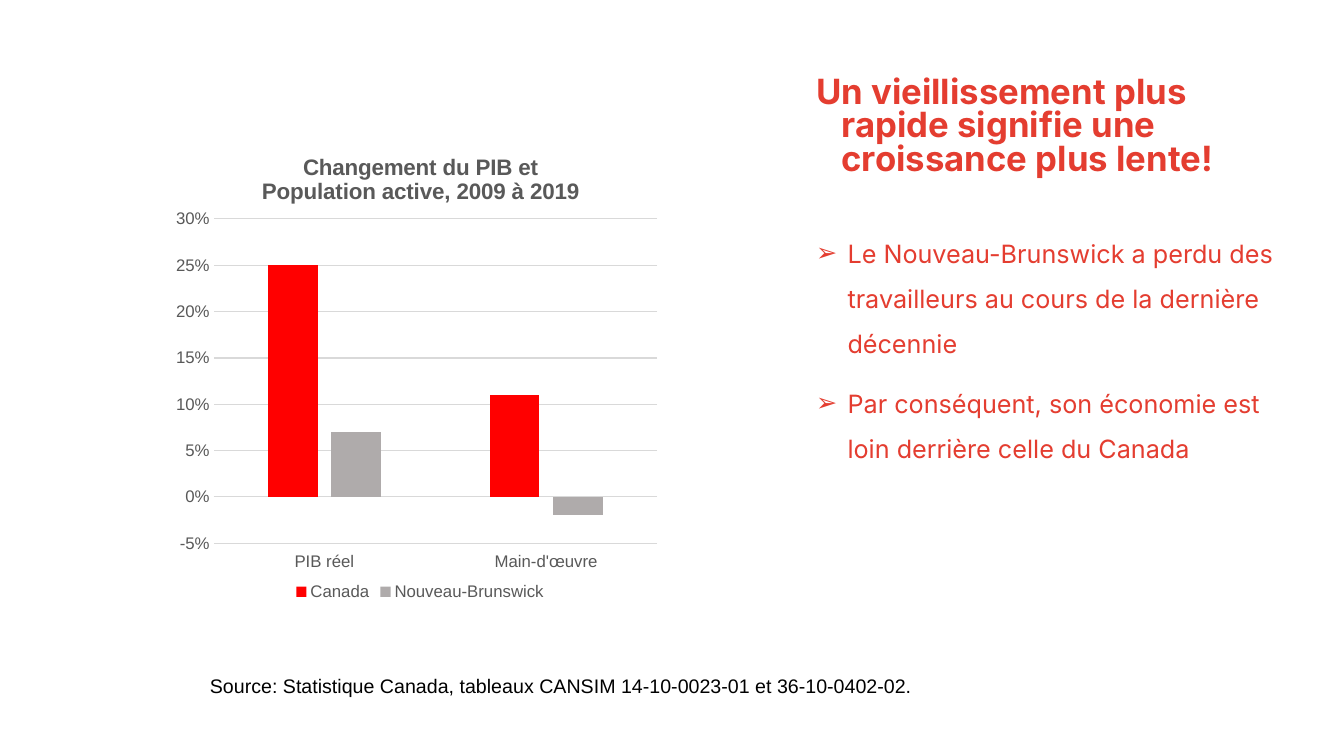
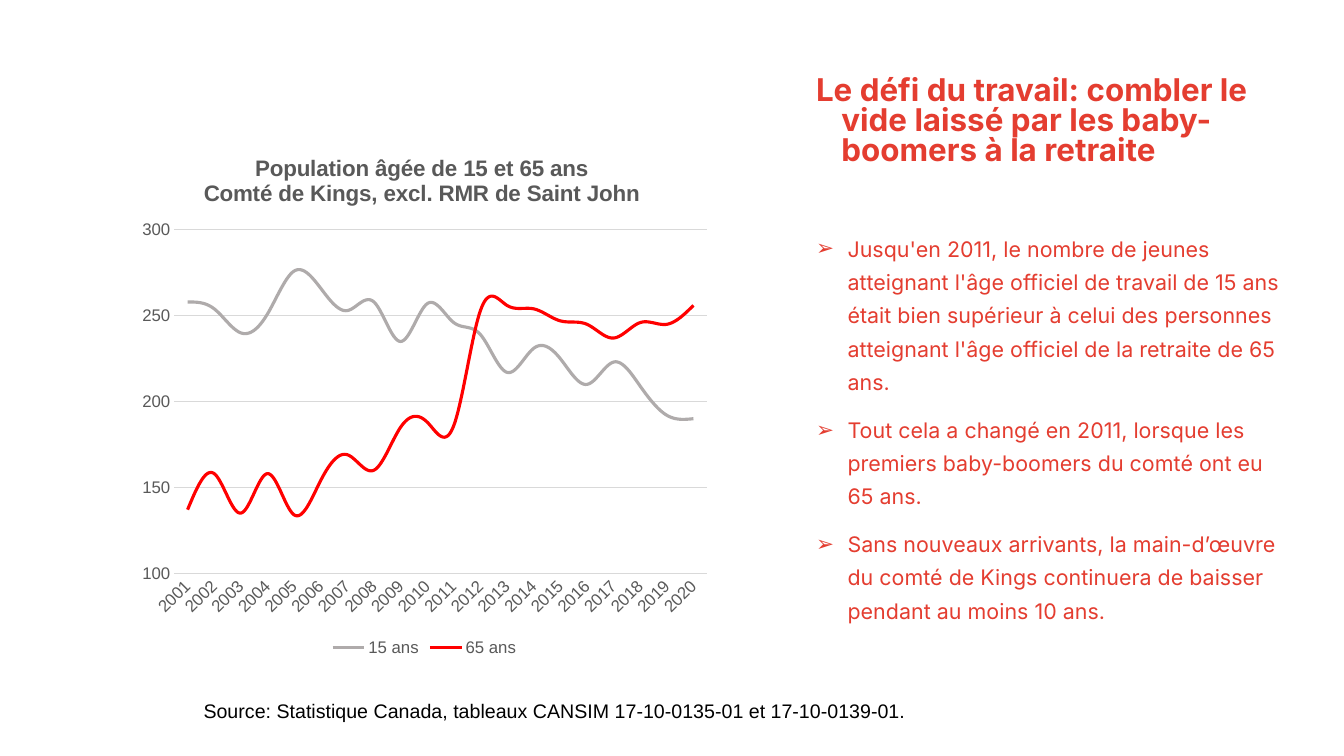
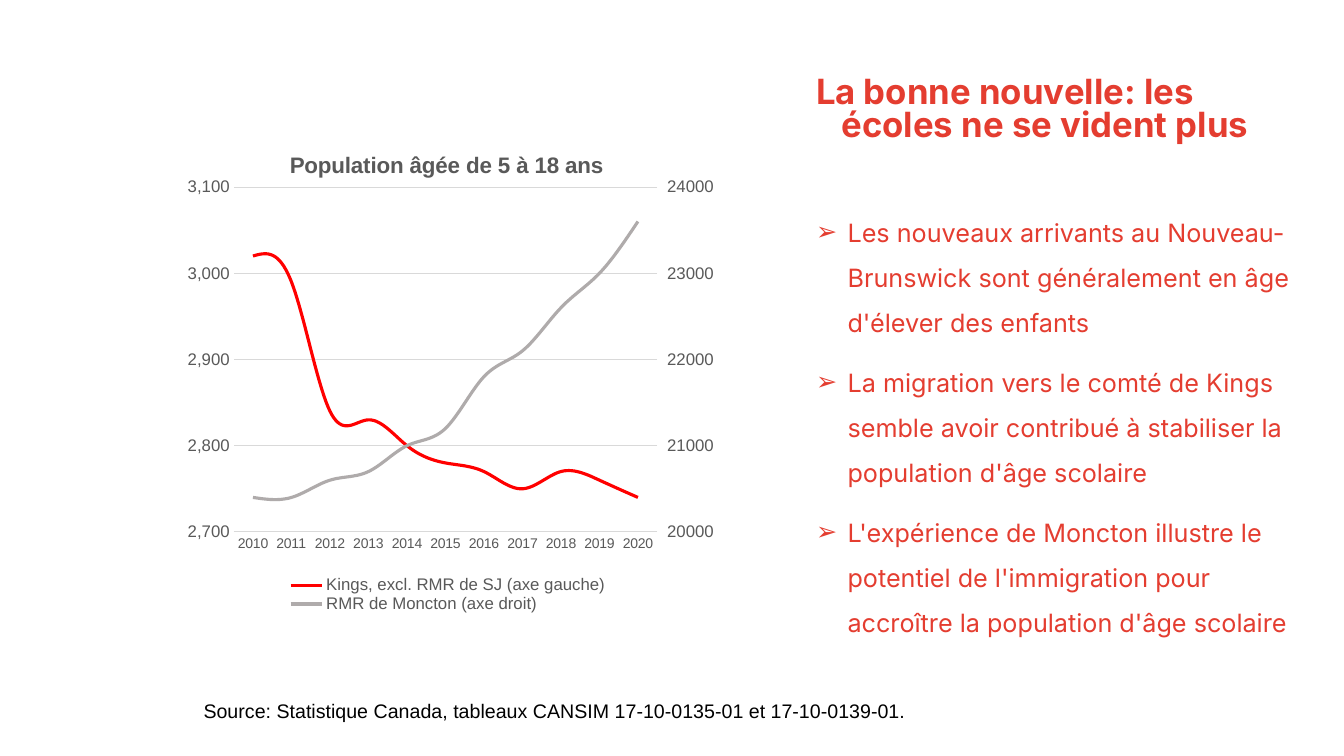
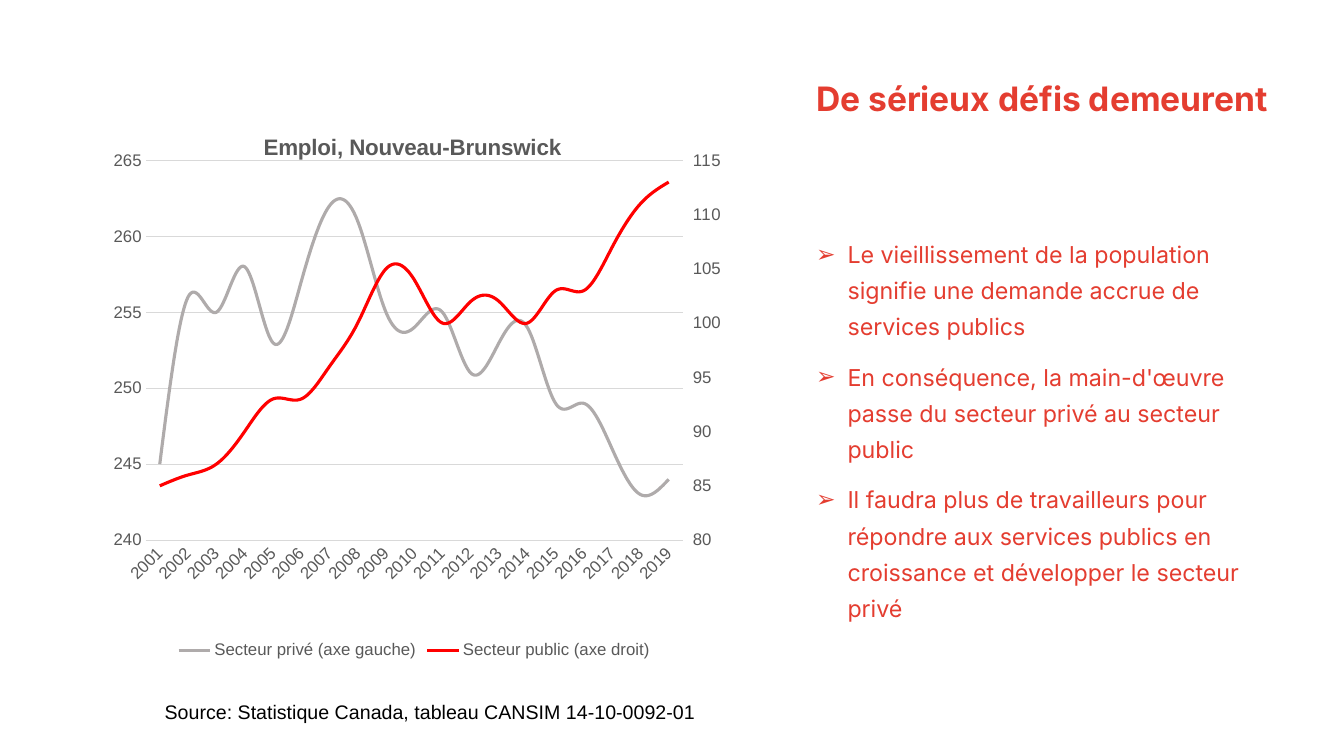
"""Build four slides on ageing and employment in New Brunswick."""
from copy import deepcopy
from dataclasses import dataclass

from lxml import etree
from pptx import Presentation
from pptx import util as u
from pptx.chart import axis as chart_axis
from pptx.chart import data
from pptx.dml import color
from pptx.enum import chart as chart_enum
from pptx.enum import text
from pptx.oxml import ns

COLORS = {
    "accent": "E43D30",
    "source": "000000",
    "label": "595959",
    "grid": "D9D9D9",
    "red": "FF0000",
    "grey": "AFABAB",
}
HEADING_FONT = "Inter"
CHART_FONT = "Arial"
PANEL_LEFT = 19.68
PANEL_WIDTH = 12.93
TITLE_TOP = 1.83
CHART_TITLE_Y = 0.03


@dataclass(frozen=True)
class Box:
    left: float
    top: float
    width: float
    height: float

    def lengths(self) -> tuple:
        return u.Cm(self.left), u.Cm(self.top), u.Cm(self.width), u.Cm(self.height)


@dataclass(frozen=True)
class Series:
    name: str
    values: tuple
    color: str


@dataclass(frozen=True)
class Scale:
    low: float
    high: float
    step: float
    number_format: str = "0"


@dataclass(frozen=True)
class ChartSpec:
    box: Box
    title: tuple
    title_x: float
    plot: tuple
    categories: tuple
    series: tuple
    left: Scale
    right: Scale | None = None
    legend: tuple | None = None
    columns: bool = False
    category_size: float = 12
    slanted: bool = False


@dataclass(frozen=True)
class Page:
    title: str
    title_size: float
    title_spacing: float
    bullets: tuple
    bullet_box: Box
    bullet_size: float
    bullet_spacing: float
    source: str
    source_box: Box
    chart: ChartSpec


def years(first: int, last: int) -> tuple:
    return tuple(str(year) for year in range(first, last + 1))


PAGES = (
    Page(
        "Un vieillissement plus rapide signifie une croissance plus lente!", 24.8, 0.8,
        (
            "Le Nouveau-Brunswick a perdu des travailleurs au cours de la dernière décennie",
            "Par conséquent, son économie est loin derrière celle du Canada",
        ),
        Box(PANEL_LEFT, 5.49, PANEL_WIDTH, 11), 18, 1.5,
        "Source: Statistique Canada, tableaux CANSIM 14-10-0023-01 et 36-10-0402-02.",
        Box(5.04, 16.85, 23.77, 0.86),
        ChartSpec(
            Box(4.24, 3.43, 12.7, 11.81),
            ("Changement du PIB et", "Population active, 2009 à 2019"), 0.18,
            (0.09, 0.177, 0.88, 0.692),
            ("PIB réel", "Main-d'œuvre"),
            (
                Series("Canada", (0.25, 0.11), "red"),
                Series("Nouveau-Brunswick", (0.07, -0.02), "grey"),
            ),
            Scale(-0.05, 0.3, 0.05, "0%"),
            columns=True,
        ),
    ),
    Page(
        "Le défi du travail: combler le vide laissé par les baby-boomers à la retraite", 22.4, 0.8,
        (
            "Jusqu'en 2011, le nombre de jeunes atteignant l'âge officiel de travail de 15 ans "
            "était bien supérieur à celui des personnes atteignant l'âge officiel de la retraite "
            "de 65 ans.",
            "Tout cela a changé en 2011, lorsque les premiers baby-boomers du comté ont eu 65 ans.",
            "Sans nouveaux arrivants, la main-d’œuvre du comté de Kings continuera de baisser "
            "pendant au moins 10 ans.",
        ),
        Box(PANEL_LEFT, 5.62, PANEL_WIDTH, 11), 15.3, 1.3,
        "Source: Statistique Canada, tableaux CANSIM 17-10-0135-01 et 17-10-0139-01.",
        Box(4.88, 17.48, 23.77, 0.86),
        ChartSpec(
            Box(3.28, 3.43, 14.83, 13.21),
            ("Population âgée de 15 et 65 ans", "Comté de Kings, excl. RMR de Saint John"), 0.12,
            (0.075, 0.179, 0.905, 0.655),
            years(2001, 2020),
            (
                Series("15 ans", (258, 254, 240, 251, 276, 266, 253, 258, 235, 257,
                                  246, 239, 217, 231, 225, 210, 223, 209, 192, 190), "grey"),
                Series("65 ans", (137, 158, 135, 158, 134, 154, 169, 160, 185, 188,
                                  186, 253, 256, 254, 247, 245, 237, 246, 245, 256), "red"),
            ),
            Scale(100, 300, 50, "#,##0"),
            slanted=True,
        ),
    ),
    Page(
        "La bonne nouvelle: les écoles ne se vident plus", 24.8, 0.8,
        (
            "Les nouveaux arrivants au Nouveau-Brunswick sont généralement en âge d'élever "
            "des enfants",
            "La migration vers le comté de Kings semble avoir contribué à stabiliser la "
            "population d'âge scolaire",
            "L'expérience de Moncton illustre le potentiel de l'immigration pour accroître la "
            "population d'âge scolaire",
        ),
        Box(PANEL_LEFT, 4.96, 13.39, 12.14), 18, 1.5,
        "Source: Statistique Canada, tableaux CANSIM 17-10-0135-01 et 17-10-0139-01.",
        Box(4.88, 17.48, 23.77, 0.86),
        ChartSpec(
            Box(4.24, 3.33, 14.1, 12.14),
            ("Population âgée de 5 à 18 ans",), 0.21,
            (0.117, 0.114, 0.757, 0.716),
            years(2010, 2020),
            (
                Series("Kings, excl. RMR de SJ (axe gauche)",
                       (3020, 2990, 2840, 2830, 2800, 2780, 2770, 2750, 2770, 2760, 2740), "red"),
                Series("RMR de Moncton (axe droit)",
                       (20400, 20400, 20600, 20700, 21000, 21200,
                        21800, 22100, 22600, 23000, 23600), "grey"),
            ),
            Scale(2700, 3100, 100, "#,##0"),
            Scale(20000, 24000, 1000),
            legend=(0.21, 0.92, 0.58, 0.08),
            category_size=10,
        ),
    ),
    Page(
        "De sérieux défis demeurent", 24, 1,
        (
            "Le vieillissement de la population signifie une demande accrue de services publics",
            "En conséquence, la main-d'œuvre passe du secteur privé au secteur public",
            "Il faudra plus de travailleurs pour répondre aux services publics en croissance et "
            "développer le secteur privé",
        ),
        Box(PANEL_LEFT, 5.72, PANEL_WIDTH, 11), 16.6, 1.3,
        "Source: Statistique Canada, tableau CANSIM 14-10-0092-01",
        Box(3.9, 17.51, 22.78, 0.86),
        ChartSpec(
            Box(2.64, 2.82, 15.6, 13.89),
            ("Emploi, Nouveau-Brunswick",), 0.25,
            (0.066, 0.088, 0.868, 0.689),
            years(2001, 2019),
            (
                Series("Secteur privé (axe gauche)",
                       (245, 256, 255, 258, 253, 257, 262, 261, 255, 254,
                        255, 251, 253, 254, 249, 249, 246, 243, 244), "grey"),
                Series("Secteur public (axe droit)",
                       (85, 86, 87, 90, 93, 93, 96, 100, 105, 104,
                        100, 102, 102, 100, 103, 103, 107, 111, 113), "red"),
            ),
            Scale(240, 265, 5),
            Scale(80, 115, 5),
            slanted=True,
        ),
    ),
)


def rgb(name: str) -> color.RGBColor:
    return color.RGBColor.from_string(COLORS[name])


def style_font(font, name: str, size: float, color_name: str, bold: bool = False) -> None:
    font.name = name
    font.size = u.Pt(size)
    font.bold = bold
    font.color.rgb = rgb(color_name)


def add_run(paragraph, content: str, name: str, size: float, color_name: str,
            bold: bool = False) -> None:
    run = paragraph.add_run()
    run.text = content
    style_font(run.font, name, size, color_name, bold)


def set_indent(paragraph, margin: float, indent: float) -> None:
    properties = paragraph._p.get_or_add_pPr()
    properties.set("marL", str(u.Cm(margin)))
    properties.set("indent", str(u.Cm(indent)))


def add_bullet(paragraph) -> None:
    properties = paragraph._p.get_or_add_pPr()
    bullet_color = etree.SubElement(properties, ns.qn("a:buClr"))
    etree.SubElement(bullet_color, ns.qn("a:srgbClr"), val=COLORS["accent"])
    etree.SubElement(properties, ns.qn("a:buFont"), typeface=CHART_FONT)
    etree.SubElement(properties, ns.qn("a:buChar"), char="➢")


def add_title(slide, page: Page) -> None:
    title = slide.shapes.title
    box = Box(PANEL_LEFT, TITLE_TOP, PANEL_WIDTH, 3.3)
    title.left, title.top, title.width, title.height = box.lengths()
    frame = title.text_frame
    frame.word_wrap = True
    frame.auto_size = text.MSO_AUTO_SIZE.NONE
    frame.vertical_anchor = text.MSO_ANCHOR.TOP
    paragraph = frame.paragraphs[0]
    paragraph.alignment = text.PP_ALIGN.LEFT
    paragraph.line_spacing = page.title_spacing
    set_indent(paragraph, 1.27, -0.64)
    add_run(paragraph, page.title, HEADING_FONT, page.title_size, "accent", True)


def add_text_frame(slide, box: Box):
    frame = slide.shapes.add_textbox(*box.lengths()).text_frame
    frame.word_wrap = True
    return frame


def add_bullets(slide, page: Page) -> None:
    frame = add_text_frame(slide, page.bullet_box)
    for index, content in enumerate(page.bullets):
        paragraph = frame.add_paragraph() if index else frame.paragraphs[0]
        add_bullet(paragraph)
        set_indent(paragraph, 1.43, -0.79)
        paragraph.line_spacing = page.bullet_spacing
        if index:
            paragraph.space_before = u.Pt(10)
        add_run(paragraph, content, HEADING_FONT, page.bullet_size, "accent")


def add_source(slide, page: Page) -> None:
    frame = add_text_frame(slide, page.source_box)
    add_run(frame.paragraphs[0], page.source, CHART_FONT, 14, "source")


def set_layout(parent, position: int, values: tuple, inner: bool = False) -> None:
    for old in parent.findall(ns.qn("c:layout")):
        parent.remove(old)
    layout = etree.Element(ns.qn("c:layout"))
    manual = etree.SubElement(layout, ns.qn("c:manualLayout"))
    if inner:
        etree.SubElement(manual, ns.qn("c:layoutTarget"), val="inner")
    for mode in ("xMode", "yMode"):
        etree.SubElement(manual, ns.qn(f"c:{mode}"), val="edge")
    for key, value in zip(("x", "y", "w", "h"), values):
        etree.SubElement(manual, ns.qn(f"c:{key}"), val=str(value))
    parent.insert(position, layout)


def set_scale(value_axis, scale: Scale) -> None:
    value_axis.minimum_scale = scale.low
    value_axis.maximum_scale = scale.high
    value_axis.major_unit = scale.step
    value_axis.tick_labels.number_format = scale.number_format
    value_axis.tick_labels.number_format_is_linked = False


def format_axes(chart, spec: ChartSpec) -> None:
    category_axis, value_axis = chart.category_axis, chart.value_axis
    for axis, size in ((category_axis, spec.category_size), (value_axis, 12)):
        axis.major_tick_mark = chart_enum.XL_TICK_MARK.NONE
        style_font(axis.tick_labels.font, CHART_FONT, size, "label")
    if spec.columns:
        category_axis.tick_label_position = chart_enum.XL_TICK_LABEL_POSITION.LOW
    value_axis.has_major_gridlines = True
    for line in (category_axis.format.line, value_axis.major_gridlines.format.line):
        line.color.rgb = rgb("grid")
        line.width = u.Pt(0.75)
    value_axis.format.line.fill.background()
    if spec.slanted:
        body = category_axis._element.find(f"{ns.qn('c:txPr')}/{ns.qn('a:bodyPr')}")
        body.set("rot", "-2700000")
    set_scale(value_axis, spec.left)


def add_right_axis(chart, scale: Scale) -> None:
    plot_area = chart._chartSpace.chart.plotArea
    first = plot_area.find(ns.qn("c:lineChart"))
    second = deepcopy(first)
    first.remove(first.findall(ns.qn("c:ser"))[1])
    second.remove(second.find(ns.qn("c:ser")))
    first.addnext(second)

    category_element = deepcopy(chart.category_axis._element)
    value_element = deepcopy(chart.value_axis._element)
    identifiers = ("50010", "50020")
    for reference, identifier in zip(second.findall(ns.qn("c:axId")), identifiers):
        reference.set("val", identifier)
    pairs = zip((category_element, value_element), identifiers, reversed(identifiers))
    for element, own, crossing in pairs:
        element.find(ns.qn("c:axId")).set("val", own)
        element.find(ns.qn("c:crossAx")).set("val", crossing)
    category_element.find(ns.qn("c:delete")).set("val", "1")
    value_element.find(ns.qn("c:axPos")).set("val", "r")
    value_element.find(ns.qn("c:crosses")).set("val", "max")
    chart.value_axis._element.addnext(value_element)
    value_element.addnext(category_element)

    right_axis = chart_axis.ValueAxis(value_element)
    right_axis.has_major_gridlines = False
    right_axis.major_tick_mark = chart_enum.XL_TICK_MARK.OUTSIDE
    set_scale(right_axis, scale)


def format_series(chart, spec: ChartSpec) -> None:
    plot = chart.plots[0]
    plot.vary_by_categories = False
    if spec.columns:
        plot.gap_width = 219
        plot.overlap = -27
    for series, source in zip(plot.series, spec.series):
        if spec.columns:
            series.invert_if_negative = False
            series.format.fill.solid()
            series.format.fill.fore_color.rgb = rgb(source.color)
        else:
            series.smooth = True
            series.format.line.color.rgb = rgb(source.color)
            series.format.line.width = u.Pt(2.25)


def add_chart_title(chart, spec: ChartSpec) -> None:
    chart.has_title = True
    title = chart.chart_title
    title.include_in_layout = False
    frame = title.text_frame
    for index, content in enumerate(spec.title):
        paragraph = frame.add_paragraph() if index else frame.paragraphs[0]
        add_run(paragraph, content, CHART_FONT, 16, "label", True)
    set_layout(title._element, 1, (spec.title_x, CHART_TITLE_Y))


def add_legend(chart, spec: ChartSpec) -> None:
    chart.has_legend = True
    legend = chart.legend
    legend.position = chart_enum.XL_LEGEND_POSITION.BOTTOM
    legend.include_in_layout = False
    style_font(legend.font, CHART_FONT, 12, "label")
    if spec.legend:
        set_layout(legend._element, 1, spec.legend)


def add_chart(slide, spec: ChartSpec) -> None:
    chart_data = data.CategoryChartData()
    chart_data.categories = spec.categories
    for series in spec.series:
        chart_data.add_series(series.name, series.values)
    kinds = chart_enum.XL_CHART_TYPE
    kind = kinds.COLUMN_CLUSTERED if spec.columns else kinds.LINE
    chart = slide.shapes.add_chart(kind, *spec.box.lengths(), chart_data).chart
    style_font(chart.font, CHART_FONT, 10, "source")
    add_chart_title(chart, spec)
    add_legend(chart, spec)
    format_series(chart, spec)
    format_axes(chart, spec)
    set_layout(chart._chartSpace.chart.plotArea, 0, spec.plot, inner=True)
    if spec.right:
        add_right_axis(chart, spec.right)


def main() -> None:
    presentation = Presentation()
    presentation.slide_width = u.Cm(33.87)
    presentation.slide_height = u.Cm(19.05)
    for page in PAGES:
        slide = presentation.slides.add_slide(presentation.slide_layouts[5])
        add_title(slide, page)
        add_bullets(slide, page)
        add_source(slide, page)
        add_chart(slide, page.chart)
    presentation.save("out.pptx")


if __name__ == "__main__":
    main()
